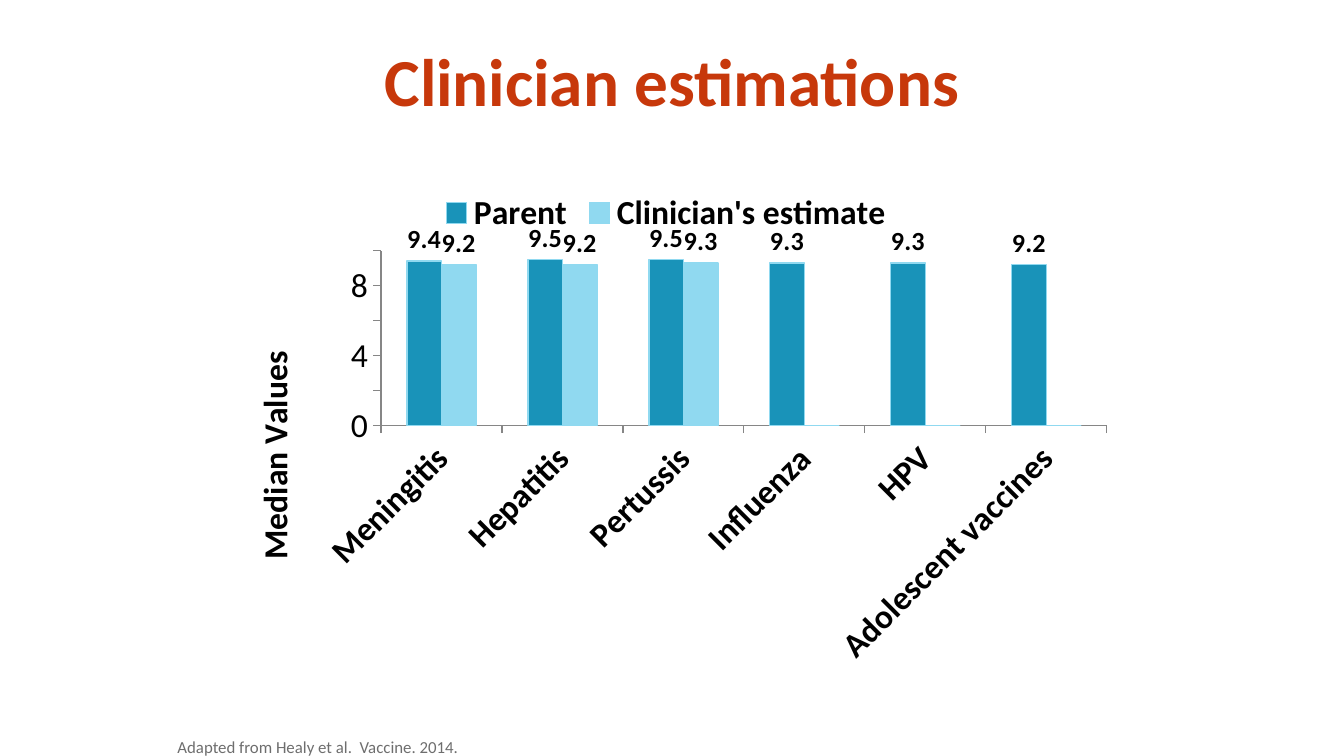
from lxml import etree
from pptx import Presentation
from pptx import util as u
from pptx.chart import data
from pptx.dml import color
from pptx.enum import chart as kinds, text
from pptx.oxml import ns

ORANGE = color.RGBColor(0xC7, 0x38, 0x0B)
TEAL = color.RGBColor(0x19, 0x93, 0xB9)
SKY = color.RGBColor(0x90, 0xD9, 0xF0)
GREY = color.RGBColor(0x6E, 0x6E, 0x6E)
AXIS_GREY = color.RGBColor(0x86, 0x86, 0x86)
BLACK = color.RGBColor(0, 0, 0)

VACCINES = ["Meningitis", "Hepatitis", "Pertussis", "Influenza", "HPV", "Adolescent vaccines"]
RATINGS = [
    ("Parent", [9.4, 9.5, 9.5, 9.3, 9.3, 9.2], TEAL),
    ("Clinician's estimate ", [9.2, 9.2, 9.3, 0, 0, 0], SKY),
]


def set_font(font, size, rgb=BLACK, bold=False):
    for name, value in {"name": "Calibri", "size": u.Pt(size), "bold": bold}.items():
        setattr(font, name, value)
    font.color.rgb = rgb


def add_text(slide, box, content, anchor, alignment, **font_format):
    shape = slide.shapes.add_textbox(*map(u.Inches, box))
    frame = shape.text_frame
    frame_format = {
        "word_wrap": True,
        "vertical_anchor": anchor,
        "margin_left": u.Inches(0.07),
        "margin_right": u.Inches(0.07),
        "margin_top": u.Inches(0.04),
        "margin_bottom": u.Inches(0.04),
    }
    for name, value in frame_format.items():
        setattr(frame, name, value)
    paragraph = frame.paragraphs[0]
    paragraph.alignment = alignment
    run = paragraph.add_run()
    run.text = content
    set_font(run.font, **font_format)


def place(element, before, **position):
    for old in element.findall(ns.qn("c:layout")):
        element.remove(old)
    layout = etree.Element(ns.qn("c:layout"))
    manual = etree.SubElement(layout, ns.qn("c:manualLayout"))
    settings = {"xMode": "edge", "yMode": "edge", **position}
    if "w" in position:
        settings = {"layoutTarget": "inner", **settings}
    for name, value in settings.items():
        etree.SubElement(manual, ns.qn(f"c:{name}")).set("val", str(value))
    following = next((child for child in element if child.tag in map(ns.qn, before)), None)
    if following is None:
        element.append(layout)
    else:
        following.addprevious(layout)


def style_series(series, values, rgb):
    series.format.fill.solid()
    series.format.fill.fore_color.rgb = rgb
    series.format.line.color.rgb = SKY
    series.format.line.width = u.Pt(0.75)
    series.invert_if_negative = False
    labels = series.data_labels
    set_font(labels.font, 14, bold=True)
    labels.show_value = True
    labels.number_format = "0.0"
    labels.number_format_is_linked = False
    labels.position = kinds.XL_LABEL_POSITION.OUTSIDE_END
    holder = series._element.find(ns.qn("c:dLbls"))
    empty = [index for index, value in enumerate(values) if value == 0]
    for position, index in enumerate(empty):
        hidden = etree.Element(ns.qn("c:dLbl"))
        etree.SubElement(hidden, ns.qn("c:idx")).set("val", str(index))
        etree.SubElement(hidden, ns.qn("c:delete")).set("val", "1")
        holder.insert(position, hidden)


def style_axis(axis, bold):
    axis_format = {
        "has_major_gridlines": False,
        "major_tick_mark": kinds.XL_TICK_MARK.OUTSIDE,
        "minor_tick_mark": kinds.XL_TICK_MARK.NONE,
    }
    for name, value in axis_format.items():
        setattr(axis, name, value)
    axis.format.line.color.rgb = AXIS_GREY
    axis.format.line.width = u.Pt(0.75)
    set_font(axis.tick_labels.font, 18, bold=bold)


def style_axes(chart):
    categories, values = chart.category_axis, chart.value_axis
    style_axis(categories, bold=True)
    style_axis(values, bold=False)
    body = categories._element.find(ns.qn("c:txPr")).find(ns.qn("a:bodyPr"))
    body.set("rot", "-2700000")
    body.set("vert", "horz")
    for name, value in {"minimum_scale": 0, "maximum_scale": 10, "major_unit": 2}.items():
        setattr(values, name, value)
    values.tick_labels.number_format = "0"
    values.tick_labels.number_format_is_linked = False
    frame = values.axis_title.text_frame
    frame.text = "Median Values"
    set_font(frame.paragraphs[0].runs[0].font, 18, bold=True)
    body = frame._txBody.find(ns.qn("a:bodyPr"))
    body.set("rot", "-5400000")
    body.set("vert", "horz")
    place(values.axis_title._element, ["c:overlay"], x=0.03, y=0.34)


def add_ratings_chart(slide, box):
    chart_data = data.CategoryChartData(number_format="0.0")
    chart_data.categories = VACCINES
    for name, values, _ in RATINGS:
        chart_data.add_series(name, values)
    frame = slide.shapes.add_chart(
        kinds.XL_CHART_TYPE.COLUMN_CLUSTERED, *map(u.Inches, box), chart_data
    )
    chart = frame.chart
    set_font(chart.font, 18)
    chart.has_title = False
    chart.has_legend = True
    chart.legend.position = kinds.XL_LEGEND_POSITION.TOP
    chart.legend.include_in_layout = False
    set_font(chart.legend.font, 18, bold=True)
    place(chart.legend._element, ["c:overlay", "c:spPr", "c:txPr"], x=0.24, y=0.02)
    plot = chart.plots[0]
    plot.gap_width = 150
    plot.overlap = 0
    plot.vary_by_categories = False
    for series, (_, values, rgb) in zip(plot.series, RATINGS):
        style_series(series, values, rgb)
    style_axes(chart)
    plot_area = chart._chartSpace.chart.plotArea
    place(plot_area, ["c:barChart"], x=0.18, y=0.15, w=0.8, h=0.35)


def main():
    presentation = Presentation()
    presentation.slide_width = u.Inches(10)
    presentation.slide_height = u.Inches(10 * 9 / 16)
    slide = presentation.slides.add_slide(presentation.slide_layouts[6])
    add_text(slide, (1.25, 0.12, 7.5, 0.94), "Clinician estimations",
             text.MSO_ANCHOR.MIDDLE, text.PP_ALIGN.CENTER, size=36, rgb=ORANGE, bold=True)
    add_ratings_chart(slide, (1.62, 1.31, 6.75, 3.71))
    add_text(slide, (1.25, 5.44, 6.75, 0.19), "Adapted from Healy et al.  Vaccine. 2014.",
             text.MSO_ANCHOR.TOP, text.PP_ALIGN.LEFT, size=9, rgb=GREY)
    presentation.save("out.pptx")


if __name__ == "__main__":
    main()
